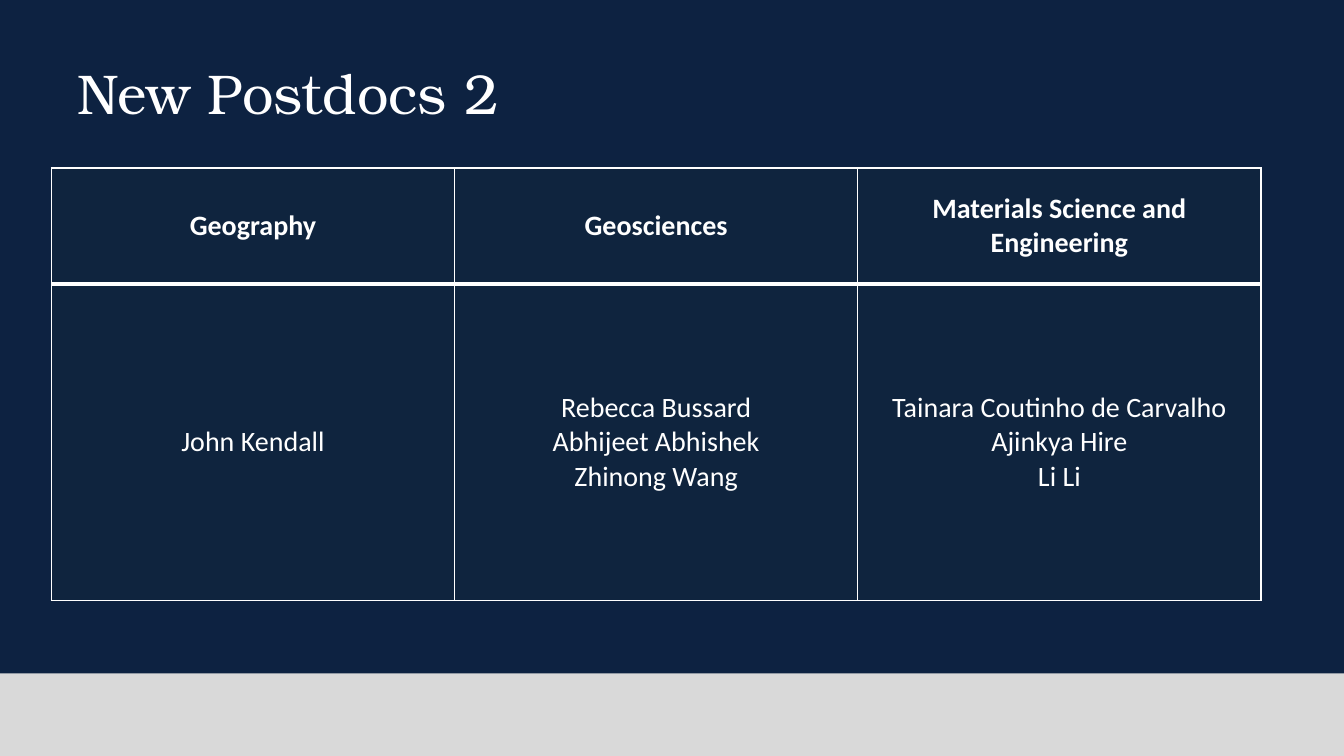
from lxml import etree
from pptx import Presentation
from pptx.dml.color import RGBColor
from pptx.enum import shapes, text
from pptx.oxml import ns
from pptx.util import Pt

NAVY, CELL_NAVY, GREY, WHITE = "0D2241", "0F243E", "D9D9D9", "FFFFFF"
DEPARTMENTS = {
    "Geography": ["John Kendall"],
    "Geosciences": ["Rebecca Bussard", "Abhijeet Abhishek", "Zhinong Wang"],
    "Materials Science and Engineering": [
        "Tainara Coutinho de Carvalho", "Ajinkya Hire", "Li Li"],
}


def paint(fill, colour):
    """Give a fill one solid colour."""
    fill.solid()
    fill.fore_color.rgb = RGBColor.from_string(colour)


def add_band(page, top, height, colour):
    """Draw a full-width background band."""
    band = page.shapes.add_shape(
        shapes.MSO_SHAPE.RECTANGLE, 0, Pt(top), Pt(960), Pt(height))
    band.shadow.inherit = False
    paint(band.fill, colour)
    band.line.fill.background()


def write_lines(frame, lines, align, font, size, bold=False):
    """Write one white paragraph per line."""
    for index, line in enumerate(lines):
        para = frame.add_paragraph() if index else frame.paragraphs[0]
        para.alignment = align
        span = para.add_run()
        span.text = line
        span.font.name = font
        span.font.size = Pt(size)
        span.font.bold = bold
        span.font.color.rgb = RGBColor.from_string(WHITE)


def set_title(page, wording):
    """Place and fill the title, in front of the bands."""
    box = page.shapes.title
    box.left, box.top, box.width, box.height = Pt(48), Pt(26), Pt(864), Pt(80)
    box.text_frame.vertical_anchor = text.MSO_ANCHOR.MIDDLE
    write_lines(box.text_frame, [wording], text.PP_ALIGN.LEFT, "TeX Gyre Bonum", 40)
    page.shapes._spTree.append(box._element)


def add_borders(cell, **widths):
    """Draw white cell borders, with widths in points by side."""
    properties = cell._tc.get_or_add_tcPr()
    for side, width in widths.items():
        line = etree.SubElement(properties, ns.qn(f"a:ln{side}"), w=str(Pt(width)))
        fill = etree.SubElement(line, ns.qn("a:solidFill"))
        etree.SubElement(fill, ns.qn("a:srgbClr"), val=WHITE)


def fill_cell(cell, lines, is_header):
    """Format one table cell and write its lines."""
    add_borders(cell, L=1, R=1, T=1 if is_header else 3, B=3 if is_header else 1)
    paint(cell.fill, CELL_NAVY)
    cell.vertical_anchor = text.MSO_ANCHOR.MIDDLE
    cell.margin_left = cell.margin_right = Pt(8)
    cell.margin_top = cell.margin_bottom = Pt(4)
    write_lines(cell.text_frame, lines, text.PP_ALIGN.CENTER, "Calibri", 20, is_header)


def add_postdoc_table(page, departments):
    """Add a table with one column per department."""
    table = page.shapes.add_table(
        2, len(departments), Pt(36.7), Pt(120), Pt(864), Pt(309)).table
    table.rows[0].height, table.rows[1].height = Pt(83), Pt(226)
    for column, (department, names) in enumerate(departments.items()):
        fill_cell(table.cell(0, column), [department], True)
        fill_cell(table.cell(1, column), names, False)


def main():
    """Build the slide and save the deck."""
    deck = Presentation()
    deck.slide_width, deck.slide_height = Pt(960), Pt(540)
    page = deck.slides.add_slide(deck.slide_layouts.get_by_name("Title Only"))
    add_band(page, 0, 482, NAVY)
    add_band(page, 481, 59, GREY)
    set_title(page, "New Postdocs 2")
    add_postdoc_table(page, DEPARTMENTS)
    deck.save("out.pptx")


if __name__ == "__main__":
    main()
